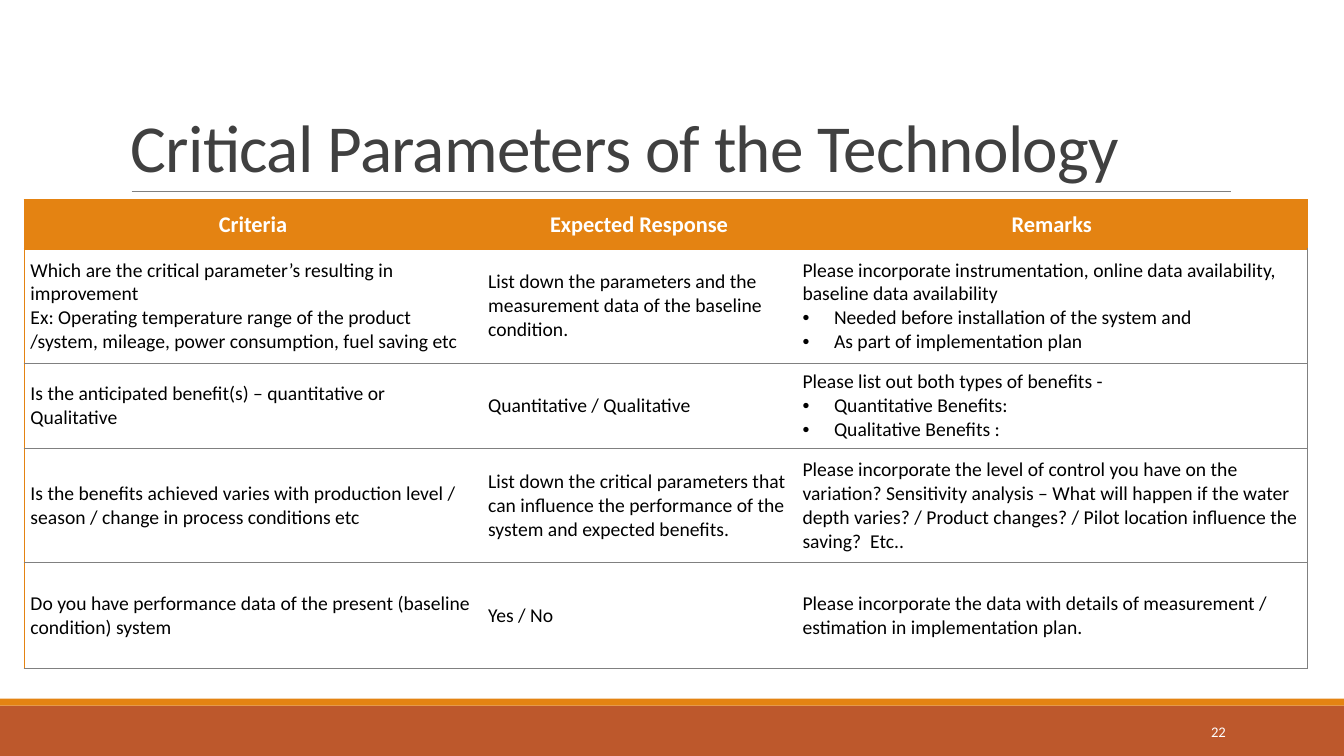
from dataclasses import dataclass

from lxml import etree
from pptx import Presentation
from pptx.dml.color import RGBColor
from pptx.enum.shapes import MSO_CONNECTOR, MSO_SHAPE
from pptx.enum.text import MSO_ANCHOR, PP_ALIGN
from pptx.oxml.ns import qn
from pptx.util import Pt

LEFT, CENTER, RIGHT = PP_ALIGN.LEFT, PP_ALIGN.CENTER, PP_ALIGN.RIGHT
MIDDLE, BOTTOM = MSO_ANCHOR.MIDDLE, MSO_ANCHOR.BOTTOM
RECTANGLE, STRAIGHT = MSO_SHAPE.RECTANGLE, MSO_CONNECTOR.STRAIGHT


@dataclass(frozen=True)
class Theme:
    font: str = "Calibri"
    orange: str = "E48312"
    rust: str = "BD582C"
    rule: str = "808080"
    title: str = "404040"
    text: str = "000000"
    white: str = "FFFFFF"
    title_size: float = 48
    header_size: float = 16
    body_size: float = 14
    number_size: float = 10.5


THEME = Theme()
PAGE_WIDTH, PAGE_HEIGHT = 960, 540
COLUMN_WIDTHS = (326.9, 224.6, 365)
ROW_HEIGHTS = (35.3, 81.4, 61.2, 81.4, 75.6)
BULLET = "• "
BULLET_INDENT = Pt(22.5)

# Each cell is a list of paragraphs; a leading bullet makes a list item.
ROWS = [
    [["Criteria"], ["Expected Response"], ["Remarks"]],
    [
        ["Which are the critical parameter’s resulting in improvement",
         "Ex: Operating temperature range of the product /system, mileage, "
         "power consumption, fuel saving etc"],
        ["List down the parameters and the measurement data of the baseline condition."],
        ["Please incorporate instrumentation, online data availability, "
         "baseline data availability",
         "• Needed before installation of the system and",
         "• As part of implementation plan"],
    ],
    [
        ["Is the anticipated benefit(s) – quantitative or Qualitative"],
        ["Quantitative / Qualitative"],
        ["Please list out both types of benefits -",
         "• Quantitative Benefits:",
         "• Qualitative Benefits :"],
    ],
    [
        ["Is the benefits achieved varies with production level / season / "
         "change in process conditions etc"],
        ["List down the critical parameters that can influence the performance "
         "of the system and expected benefits."],
        ["Please incorporate the level of control you have on the variation? "
         "Sensitivity analysis – What will happen if the water depth varies? / "
         "Product changes? / Pilot location influence the saving?  Etc.."],
    ],
    [
        ["Do you have performance data of the present (baseline condition) system"],
        ["Yes / No"],
        ["Please incorporate the data with details of measurement / estimation "
         "in implementation plan."],
    ],
]


def apply(target, **values):
    for name, value in values.items():
        setattr(target, name, value)


def write(para, text, size, color, bold=False, align=LEFT):
    """Fill one paragraph with a single formatted run."""
    if text.startswith(BULLET):
        text = text.removeprefix(BULLET)
        properties = para._p.get_or_add_pPr()
        properties.set("marL", str(BULLET_INDENT))
        properties.set("indent", str(-BULLET_INDENT))
        etree.SubElement(properties, qn("a:buFont")).set("typeface", "Arial")
        etree.SubElement(properties, qn("a:buChar")).set("char", BULLET.strip())
    para.alignment = align
    span = para.add_run()
    span.text = text
    apply(span.font, name=THEME.font, size=Pt(size), bold=bold)
    span.font.color.rgb = RGBColor.from_string(color)
    return span


def add_text(page, box, text, size, color, anchor, align=LEFT):
    frame = page.shapes.add_textbox(*map(Pt, box)).text_frame
    apply(frame, word_wrap=True, vertical_anchor=anchor)
    para = frame.paragraphs[0]
    return para, write(para, text, size, color, align=align)


def add_band(page, box, color):
    band = page.shapes.add_shape(RECTANGLE, *map(Pt, box))
    band.shadow.inherit = False
    band.fill.solid()
    band.fill.fore_color.rgb = RGBColor.from_string(color)
    band.line.fill.background()


def add_footer(page, box, number):
    """Rust band with an orange strip above it and the page number."""
    left, top, width, height = box
    strip = 5
    add_band(page, box, THEME.rust)
    add_band(page, (left, top - strip, width, strip), THEME.orange)
    add_text(page, (left + 780, top + 4.5, 102.7, 28.8), number,
             THEME.number_size, THEME.white, MIDDLE, RIGHT)


def add_title(page, box, text):
    """Title standing on a thin rule."""
    left, top, width, height = box
    base = top + height
    rule = page.shapes.add_connector(
        STRAIGHT, Pt(left + 7.7), Pt(base), Pt(left + width + 0.7), Pt(base))
    rule.line.width = Pt(0.5)
    rule.line.color.rgb = RGBColor.from_string(THEME.rule)
    etree.SubElement(rule._element.spPr, qn("a:effectLst"))
    para, span = add_text(page, box, text, THEME.title_size, THEME.title, BOTTOM)
    para.line_spacing = 0.85
    span._r.get_or_add_rPr().set("spc", "-50")


def set_borders(cell, colors):
    """Draw the left, right, top and bottom edges; None hides an edge."""
    properties = cell._tc.get_or_add_tcPr()
    for position, (side, color) in enumerate(zip("LRTB", colors)):
        edge = etree.Element(qn(f"a:ln{side}"), w=str(Pt(1 if color == THEME.orange else 0.75)))
        if color:
            fill = etree.SubElement(edge, qn("a:solidFill"))
            etree.SubElement(fill, qn("a:srgbClr")).set("val", color)
        else:
            etree.SubElement(edge, qn("a:noFill"))
        properties.insert(position, edge)


def fill_cell(cell, texts, header):
    apply(cell, margin_left=Pt(4.5), margin_right=Pt(4.5), margin_top=0,
          margin_bottom=0, vertical_anchor=MIDDLE)
    cell.fill.solid()
    cell.fill.fore_color.rgb = RGBColor.from_string(THEME.orange if header else THEME.white)
    frame = cell.text_frame
    for index, text in enumerate(texts):
        para = frame.add_paragraph() if index else frame.paragraphs[0]
        if header:
            write(para, text, THEME.header_size, THEME.white, True, CENTER)
        else:
            write(para, text, THEME.body_size, THEME.text)


def add_criteria_table(page, left, top):
    box = (left, top, sum(COLUMN_WIDTHS), sum(ROW_HEIGHTS))
    table = page.shapes.add_table(len(ROWS), len(COLUMN_WIDTHS), *map(Pt, box)).table
    for column, width in zip(table.columns, COLUMN_WIDTHS):
        column.width = Pt(width)
    for row, height in zip(table.rows, ROW_HEIGHTS):
        row.height = Pt(height)
    last = len(COLUMN_WIDTHS) - 1
    for r, row_texts in enumerate(ROWS):
        edge = THEME.rule if r else THEME.orange
        above = THEME.rule if r > 1 else THEME.orange
        for c, texts in enumerate(row_texts):
            cell = table.cell(r, c)
            fill_cell(cell, texts, header=r == 0)
            set_borders(cell, (None if c else THEME.orange,
                               edge if c == last else None, above, edge))


def main():
    deck = Presentation()
    apply(deck, slide_width=Pt(PAGE_WIDTH), slide_height=Pt(PAGE_HEIGHT))
    page = deck.slides.add_slide(deck.slide_layouts[6])
    add_footer(page, (0, 504, PAGE_WIDTH, 36), "22")
    add_title(page, (86.4, 22.6, 792, 114.2), "Critical Parameters of the Technology")
    add_criteria_table(page, 17.3, 142.6)
    deck.save("out.pptx")


if __name__ == "__main__":
    main()
